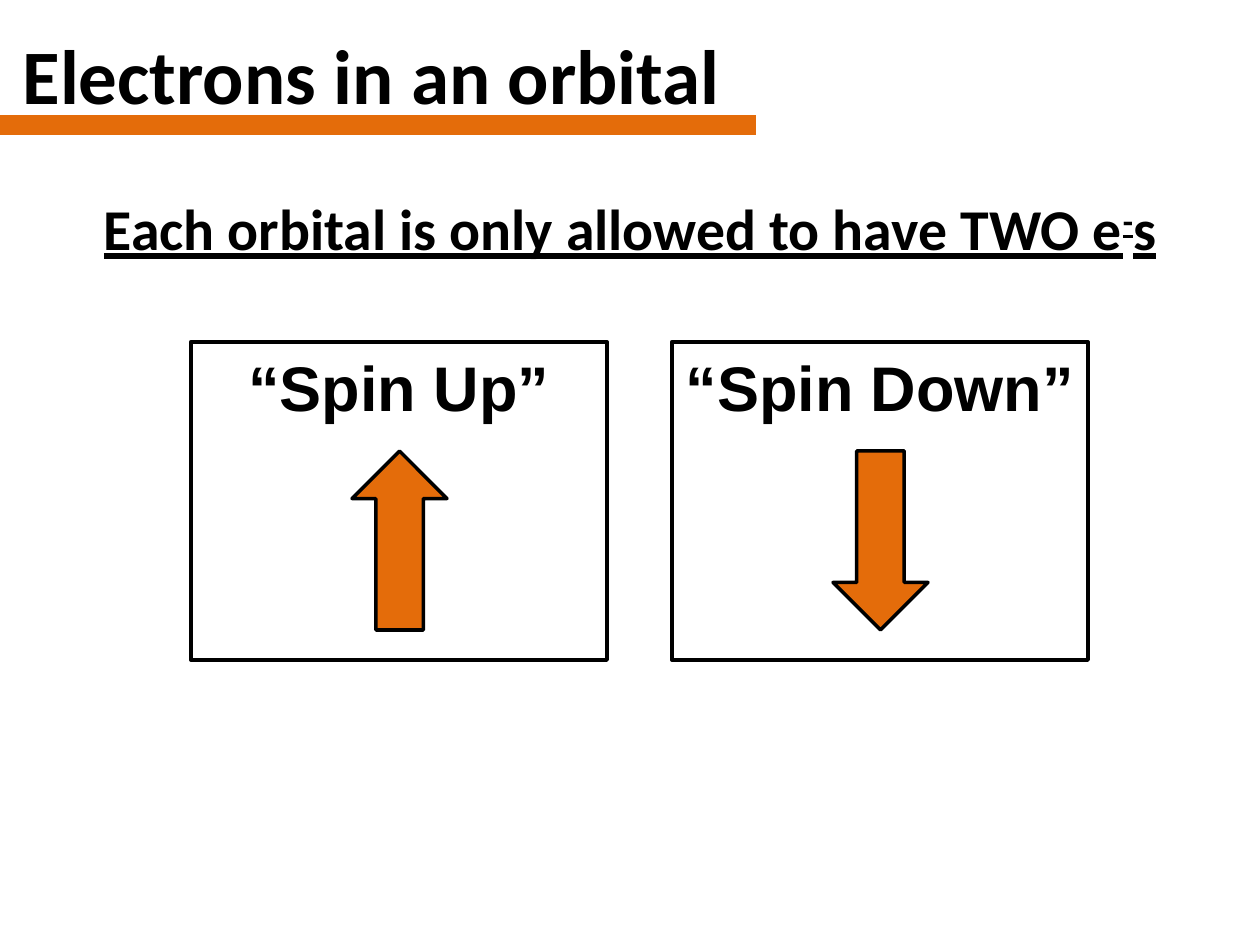
from lxml import etree
from pptx import Presentation
from pptx.dml.color import RGBColor
from pptx.enum.shapes import MSO_CONNECTOR, MSO_SHAPE
from pptx.enum.text import MSO_ANCHOR, MSO_AUTO_SIZE, PP_ALIGN
from pptx.oxml.ns import qn
from pptx.util import Pt

PX = 914400 // 126
BLACK = RGBColor(0x00, 0x00, 0x00)
ORANGE = RGBColor(0xE4, 0x6C, 0x0A)
LEFT, CENTER = PP_ALIGN.LEFT, PP_ALIGN.CENTER
TOP, MIDDLE = MSO_ANCHOR.TOP, MSO_ANCHOR.MIDDLE
NO_FIT = MSO_AUTO_SIZE.NONE
STRAIGHT = MSO_CONNECTOR.STRAIGHT
RECT, ARROW = MSO_SHAPE.RECTANGLE, MSO_SHAPE.DOWN_ARROW


def px(*sizes):
    return [size * PX for size in sizes]


def write(shape, parts, align, anchor, **looks):
    frame = shape.text_frame
    frame.word_wrap = True
    frame.auto_size = NO_FIT
    frame.vertical_anchor = anchor
    para = frame.paragraphs[0]
    para.alignment = align
    for text, raised in parts:
        run = para.add_run()
        run.text = text
        run.font.color.rgb = BLACK
        for name, value in looks.items():
            setattr(run.font, name, value)
        if raised:
            run.font._element.set("baseline", "30000")
    return para


deck = Presentation()
deck.slide_width, deck.slide_height = px(1260, 945)
slide = deck.slides.add_slide(deck.slide_layouts[1])
shapes = slide.shapes
title, body = slide.placeholders

title.left, title.top, title.width, title.height = px(10, 21, 777, 105)
write(title, [("Electrons in an orbital", False)], LEFT, MIDDLE,
      name="Calibri", size=Pt(44), bold=True)

body.left, body.top, body.width, body.height = px(21, 116, 1218, 624)
body.text_frame.margin_top = 90 * PX
rule = [("Each orbital is only allowed to have TWO e", False), ("-", True), ("s", False)]
para = write(body, rule, CENTER, TOP,
             name="Calibri", size=Pt(33), bold=True, underline=True)
para.line_spacing = 0.8
para.space_before = Pt(0)
props = para._p.get_or_add_pPr()
props.set("marL", "0")
props.set("indent", "0")
etree.SubElement(props, qn("a:buNone"))

bar = shapes.add_connector(STRAIGHT, *px(0, 125, 756, 125))
bar.line.color.rgb = ORANGE
bar.line.width = Pt(11)
etree.SubElement(bar._element.spPr, qn("a:effectLst"))

for left, label, turn in [(191, "“Spin Up”", 180), (672, "“Spin Down”", 0)]:
    box = shapes.add_shape(RECT, *px(left, 342, 416, 318))
    box.fill.background()
    write(box, [(label, False)], CENTER, TOP, name="Arial", size=Pt(36), bold=True)
    arrow = shapes.add_shape(ARROW, *px(left + 161, 451, 95, 179))
    arrow.rotation = turn
    arrow.fill.solid()
    arrow.fill.fore_color.rgb = ORANGE
    for shape, width in [(box, 2.25), (arrow, 2)]:
        shape.shadow.inherit = False
        shape.line.color.rgb = BLACK
        shape.line.width = Pt(width)

deck.save("out.pptx")
